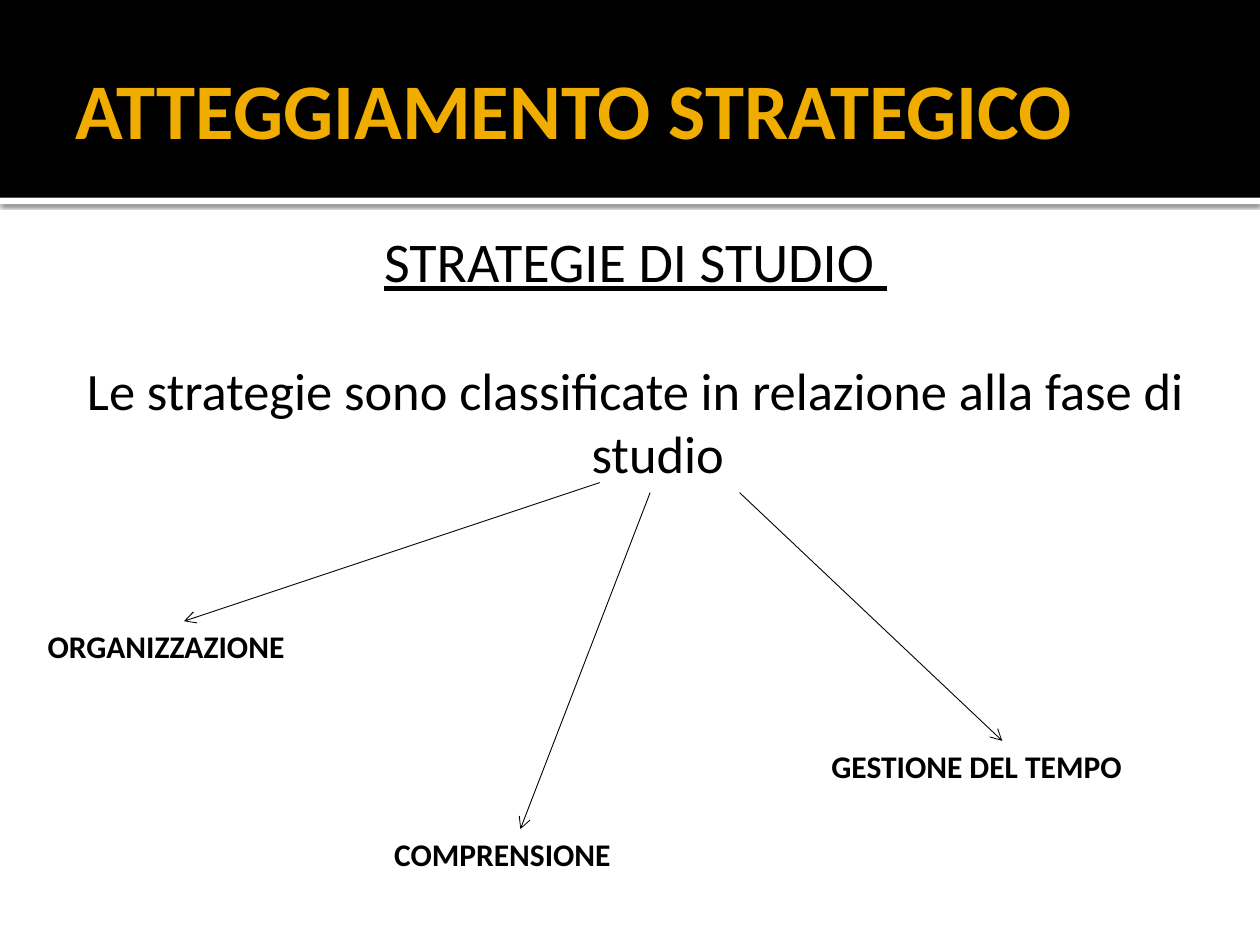
from lxml.etree import SubElement
from pptx import Presentation
from pptx.dml.color import RGBColor
from pptx.enum.shapes import MSO_CONNECTOR, MSO_SHAPE
from pptx.enum.text import MSO_ANCHOR, MSO_AUTO_SIZE, PP_ALIGN
from pptx.oxml import parse_xml
from pptx.oxml.ns import nsdecls, qn
from pptx.util import Inches, Pt

BLACK = RGBColor(0x00, 0x00, 0x00)
WHITE = RGBColor(0xFF, 0xFF, 0xFF)
GOLD = RGBColor(0xF0, 0xAD, 0x00)
FONT = "Calibri"

TITLE = "ATTEGGIAMENTO STRATEGICO"
# text, size, underlined, space before in points
BODY = [
    ("STRATEGIE DI STUDIO ", 32, True, 0),
    ("Le strategie sono classificate in relazione alla fase di studio", 30, False, 36.6),
]
# text, left, top, width, arrow start
PHASES = [
    ("ORGANIZZAZIONE", 0.28, 4.93, 2.36, (4.76, 3.83)),
    ("COMPRENSIONE", 3.03, 6.58, 2.2, (5.16, 3.91)),
    ("GESTIONE DEL TEMPO", 6.5, 5.88, 2.91, (5.87, 3.91)),
]
LABEL_HEIGHT = 0.4

STRIP_SHADOW = (
    f'<a:effectLst {nsdecls("a")}>'
    f'<a:outerShdw blurRad="{Pt(2.5)}" dist="{Pt(0.8)}" dir="5400000" rotWithShape="0">'
    '<a:srgbClr val="000000"><a:alpha val="60000"/></a:srgbClr>'
    "</a:outerShdw></a:effectLst>"
)


def add_band(page, top, height, color):
    band = page.shapes.add_shape(
        MSO_SHAPE.RECTANGLE, 0, Inches(top), Inches(10), Inches(height))
    band.shadow.inherit = False
    band.fill.solid()
    band.fill.fore_color.rgb = color
    band.line.fill.background()
    return band


def add_box(page, left, top, width, height, insets=(0.1, 0.05, 0.1, 0.05)):
    box = page.shapes.add_textbox(*map(Inches, (left, top, width, height)))
    frame = box.text_frame
    frame.word_wrap = True
    (frame.margin_left, frame.margin_top,
     frame.margin_right, frame.margin_bottom) = map(Inches, insets)
    return box


def write(para, text, size, color=BLACK, bold=False, underline=False):
    para.add_run().text = text
    font = para.font
    font.name, font.size, font.bold = FONT, Pt(size), bold
    font.underline = underline
    font.color.rgb = color


def add_arrow(page, start, label):
    """Draw an arrow from start to the top middle of the label."""
    arrow = page.shapes.add_connector(
        MSO_CONNECTOR.STRAIGHT, *map(Inches, start), 0, 0)
    arrow.end_connect(label, 0)
    arrow.line.color.rgb = BLACK
    arrow.line.width = Pt(0.5)
    SubElement(arrow.line._get_or_add_ln(), qn("a:tailEnd"), type="arrow")
    SubElement(arrow._element.spPr, qn("a:effectLst"))


def main():
    deck = Presentation()
    deck.slide_width, deck.slide_height = Inches(10), Inches(7.5)
    page = deck.slides.add_slide(deck.slide_layouts[6])

    strip = add_band(page, 1.57, 0.05, WHITE)
    properties = strip._element.spPr
    properties.remove(properties.find(qn("a:effectLst")))
    properties.append(parse_xml(STRIP_SHADOW))
    add_band(page, 0, 1.57, BLACK)

    title = add_box(page, 0.5, 0.17, 9, 1.37, (0.1, 0.05, 0.05, 0.05)).text_frame
    title.vertical_anchor = MSO_ANCHOR.MIDDLE
    write(title.paragraphs[0], TITLE, 45, GOLD, bold=True)

    body = add_box(page, 0, 1.7, 10, 5.51, (0.06, 0.1, 0.1, 0.05)).text_frame
    for index, (text, size, underline, gap) in enumerate(BODY):
        para = body.add_paragraph() if index else body.paragraphs[0]
        write(para, text, size, underline=underline)
        para.alignment = PP_ALIGN.CENTER
        para.space_before = Pt(gap)
        indents = para._p.get_or_add_pPr()
        indents.set("marL", str(Inches(0.48)))
        indents.set("indent", str(Inches(-0.35)))

    for text, left, top, width, start in PHASES:
        label = add_box(page, left, top, width, LABEL_HEIGHT)
        label.text_frame.auto_size = MSO_AUTO_SIZE.SHAPE_TO_FIT_TEXT
        write(label.text_frame.paragraphs[0], text, 18, bold=True)
        add_arrow(page, start, label)

    deck.save("out.pptx")


if __name__ == "__main__":
    main()
